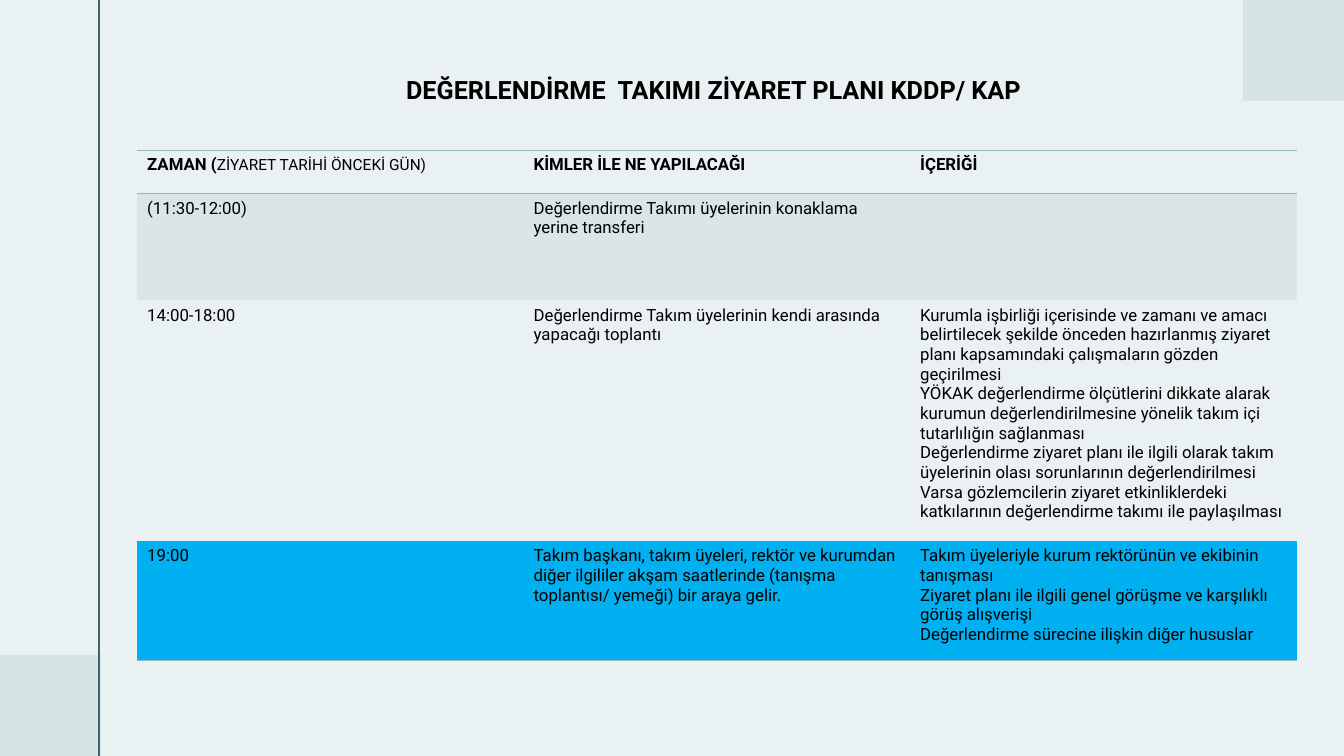
from lxml.etree import SubElement
from pptx import Presentation
from pptx.dml.color import RGBColor
from pptx.enum.shapes import MSO_CONNECTOR as Connector, MSO_SHAPE as Shape
from pptx.enum.text import MSO_ANCHOR as Anchor, PP_ALIGN as Align
from pptx.oxml.ns import qn
from pptx.util import Inches, Pt

COLUMNS, ROWS = 13.33, 7.5
FONT = "Roboto"
INK, PAPER, CORNER, RAIL = "000000", "EAF1F2", "D5E3E5", "40636A"
RULE, HIGHLIGHT = "95B8BF", "00B0F0"
PLAIN_TABLE = "{2D5ABB26-0587-4C30-8999-92F81FD0307C}"

TITLE = "DEĞERLENDİRME  TAKIMI ZİYARET PLANI KDDP/ KAP"
HEADINGS = [
    [[("ZAMAN (", {"bold": True}), ("ZİYARET TARİHİ ÖNCEKİ GÜN)", {"size": 11})]],
    [[("KİMLER İLE NE YAPILACAĞI", {"bold": True})]],
    [[("İÇERİĞİ", {"bold": True})]],
]
VISITS = [
    ["(11:30-12:00)", "Değerlendirme Takımı üyelerinin konaklama yerine transferi", ""],
    ["14:00-18:00",
     "Değerlendirme Takım üyelerinin kendi arasında yapacağı toplantı",
     ["Kurumla işbirliği içerisinde ve zamanı ve amacı belirtilecek şekilde önceden "
      "hazırlanmış ziyaret planı kapsamındaki çalışmaların gözden geçirilmesi",
      "YÖKAK değerlendirme ölçütlerini dikkate alarak kurumun değerlendirilmesine "
      "yönelik takım içi tutarlılığın sağlanması",
      "Değerlendirme ziyaret planı ile ilgili olarak takım üyelerinin olası "
      "sorunlarının değerlendirilmesi",
      "Varsa gözlemcilerin ziyaret etkinliklerdeki katkılarının değerlendirme takımı "
      "ile paylaşılması"]],
    ["19:00",
     "Takım başkanı, takım üyeleri, rektör ve kurumdan diğer ilgililer akşam "
     "saatlerinde (tanışma toplantısı/ yemeği) bir araya gelir.",
     ["Takım üyeleriyle kurum rektörünün ve ekibinin tanışması",
      "Ziyaret planı ile ilgili genel görüşme ve karşılıklı görüş alışverişi",
      "Değerlendirme sürecine ilişkin diğer hususlar"]],
]
ROW_HEIGHTS = [0.43, 1.06, 2.39, 1.18]
ROW_FILLS = [None, (RULE, 20), None, (HIGHLIGHT, 100)]
ROW_BORDERS = [("lnT", "lnB"), (), (), ("lnB",)]


def colour(hex_code):
    """Turn a hex string into a colour."""
    return RGBColor.from_string(hex_code)


def grid(*units):
    """Turn grid units of one inch into lengths."""
    return [Inches(unit) for unit in units]


def write(frame, content, size=12, bold=False, ink=INK, align=Align.LEFT):
    """Write a string, or a list of paragraphs that may hold formatted runs."""
    frame.word_wrap = True
    for index, line in enumerate([content] if isinstance(content, str) else content):
        paragraph = frame.add_paragraph() if index else frame.paragraphs[0]
        paragraph.alignment = align
        paragraph.font.size = Pt(size)
        for words, style in [(line, {})] if isinstance(line, str) else line:
            run = paragraph.add_run()
            run.text = words
            run.font.name = FONT
            run.font.size = Pt(style.get("size", size))
            run.font.bold = style.get("bold", bold)
            run.font.color.rgb = colour(ink)


def add_corner(slide, left, top):
    """Draw one square of the grid in a corner of the slide."""
    corner = slide.shapes.add_shape(Shape.RECTANGLE, *grid(left, top, 1, 1))
    corner.shadow.inherit = False
    corner.fill.solid()
    corner.fill.fore_color.rgb = colour(CORNER)
    corner.line.fill.background()


def add_rail(slide, column):
    """Draw the vertical line over the whole height of the slide."""
    rail = slide.shapes.add_connector(Connector.STRAIGHT, *grid(column, 0, column, ROWS))
    rail.line.color.rgb = colour(RAIL)
    rail.line.width = Pt(1.5)
    SubElement(rail._element.spPr, qn("a:effectLst"))


def add_title(slide, left, top, width, height):
    """Add the heading of the slide."""
    title = slide.shapes.add_textbox(*grid(left, top, width, height))
    write(title.text_frame, TITLE, size=18, bold=True)


def add_border(cell, side):
    """Rule one side of a table cell."""
    border = SubElement(cell._tc.get_or_add_tcPr(), qn(f"a:{side}"), w=str(Pt(1)))
    SubElement(SubElement(border, qn("a:solidFill")), qn("a:srgbClr"), val=RULE)


def fill_cell(cell, shade):
    """Fill a cell with a colour and opacity, or leave it clear."""
    if shade is None:
        cell.fill.background()
        return
    hue, opacity = shade
    cell.fill.solid()
    cell.fill.fore_color.rgb = colour(hue)
    if opacity < 100:
        tint = cell._tc.tcPr.find(qn("a:solidFill")).find(qn("a:srgbClr"))
        SubElement(tint, qn("a:alpha"), val=str(opacity * 1000))


def add_schedule(slide, left, top, width):
    """Add the visit plan as a table with equal columns."""
    plan = [HEADINGS, *VISITS]
    frame = slide.shapes.add_table(
        len(plan), len(HEADINGS), *grid(left, top, width, sum(ROW_HEIGHTS)))
    schedule = frame.table
    schedule.first_row = schedule.horz_banding = False
    schedule._tbl.tblPr.find(qn("a:tableStyleId")).text = PLAIN_TABLE
    layout = zip(schedule.rows, plan, ROW_HEIGHTS, ROW_FILLS, ROW_BORDERS)
    for row, entries, height, shade, sides in layout:
        row.height = Inches(height)
        for cell, entry in zip(row.cells, entries):
            cell.vertical_anchor = Anchor.TOP
            for side in sides:
                add_border(cell, side)
            fill_cell(cell, shade)
            write(cell.text_frame, entry)


def main():
    """Build the slide and save it."""
    deck = Presentation()
    deck.slide_width, deck.slide_height = grid(COLUMNS, ROWS)
    slide = deck.slides.add_slide(deck.slide_layouts[6])
    slide.background.fill.solid()
    slide.background.fill.fore_color.rgb = colour(PAPER)
    add_corner(slide, 0, ROWS - 1)
    add_corner(slide, COLUMNS - 1, 0)
    add_rail(slide, 0.98)
    add_schedule(slide, 1.36, 1.49, 11.5)
    add_title(slide, 3.93, 0.69, 7.87, 0.71)
    deck.save("out.pptx")


if __name__ == "__main__":
    main()
